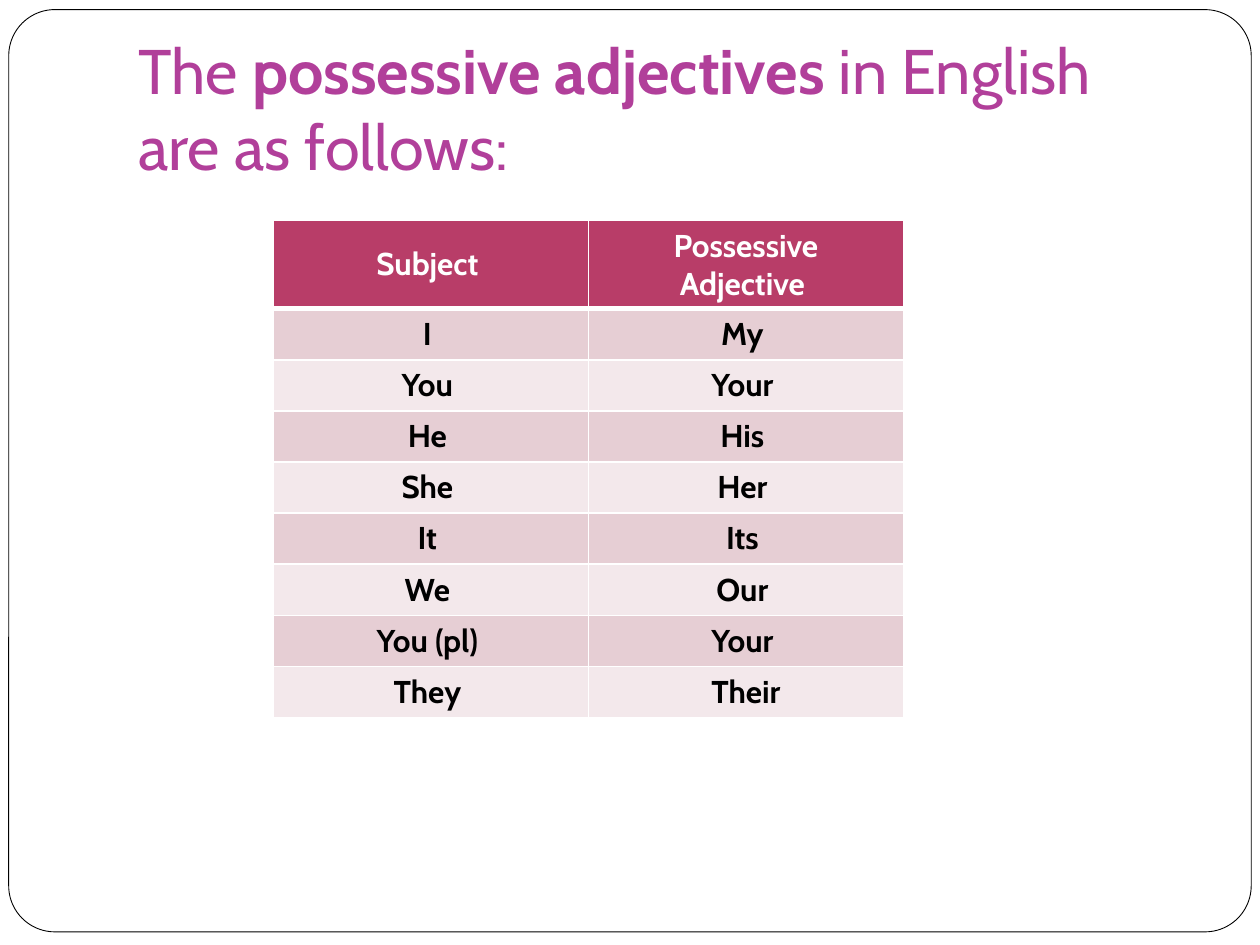
from lxml.etree import SubElement
from pptx import Presentation
from pptx.dml.color import RGBColor
from pptx.enum.shapes import MSO_SHAPE
from pptx.enum.text import MSO_ANCHOR, PP_ALIGN
from pptx.oxml.ns import qn
from pptx.util import Pt

COLORS = {
    "white": "FFFFFF",
    "black": "000000",
    "title": "B13F9A",
    "header": "B83D68",
    "odd_row": "E6CED4",
    "even_row": "F3E8EB",
}

# A trailing space belongs to the wording; \v is a line break.
PRONOUNS = [
    ("Subject ", "Possessive\vAdjective "),
    ("I ", "My "),
    ("You ", "Your "),
    ("He ", "His "),
    ("She ", "Her "),
    ("It ", "Its "),
    ("We ", "Our "),
    ("You (pl) ", "Your "),
    ("They ", "Their"),
]


def color(name):
    return RGBColor.from_string(COLORS[name])


class SlideBuilder:
    font_name = "Cabin"
    title_size = 36
    table_size = 18

    def __init__(self, slide):
        self.slide = slide

    def style_run(self, run, size, color_name, bold):
        run.font.name = self.font_name
        run.font.size = Pt(size)
        run.font.bold = bold
        run.font.color.rgb = color(color_name)

    def frame(self, left, top, width, height):
        border = self.slide.shapes.add_shape(
            MSO_SHAPE.ROUNDED_RECTANGLE, Pt(left), Pt(top), Pt(width), Pt(height))
        border.adjustments[0] = 0.05
        border.shadow.inherit = False
        border.fill.solid()
        border.fill.fore_color.rgb = color("white")
        border.line.color.rgb = color("black")
        border.line.width = Pt(0.5)

    def title(self, left, top, width, height, parts):
        """Add a bottom-anchored title from (text, bold) parts."""
        heading = self.slide.shapes.add_textbox(Pt(left), Pt(top), Pt(width), Pt(height))
        text_frame = heading.text_frame
        text_frame.word_wrap = True
        text_frame.vertical_anchor = MSO_ANCHOR.BOTTOM
        text_frame.margin_bottom = Pt(7.2)
        for text, bold in parts:
            run = text_frame.paragraphs[0].add_run()
            run.text = text
            self.style_run(run, self.title_size, "title", bold)

    def cell_borders(self, cell, bottom, top):
        properties = cell._tc.get_or_add_tcPr()
        for side, width in (("L", 1), ("R", 1), ("T", top), ("B", bottom)):
            line = SubElement(properties, qn(f"a:ln{side}"), w=str(Pt(width)))
            fill = SubElement(line, qn("a:solidFill"))
            SubElement(fill, qn("a:srgbClr"), val=COLORS["white"])

    def table(self, left, top, width, header_height, row_height, rows):
        height = header_height + row_height * (len(rows) - 1)
        grid = self.slide.shapes.add_table(
            len(rows), len(rows[0]), Pt(left), Pt(top), Pt(width), Pt(height)).table
        for index, words in enumerate(rows):
            is_header = index == 0
            grid.rows[index].height = Pt(header_height if is_header else row_height)
            row_fill = "header" if is_header else "odd_row" if index % 2 else "even_row"
            for column, word in enumerate(words):
                cell = grid.cell(index, column)
                self.cell_borders(cell, bottom=3 if is_header else 1,
                                  top=3 if index == 1 else 1)
                cell.fill.solid()
                cell.fill.fore_color.rgb = color(row_fill)
                cell.vertical_anchor = MSO_ANCHOR.MIDDLE
                cell.text_frame.text = word
                paragraph = cell.text_frame.paragraphs[0]
                paragraph.alignment = PP_ALIGN.CENTER
                for run in paragraph.runs:
                    self.style_run(run, self.table_size,
                                   "white" if is_header else "black", True)


def main():
    presentation = Presentation()
    presentation.slide_width = Pt(720)
    presentation.slide_height = Pt(540)
    builder = SlideBuilder(presentation.slides.add_slide(presentation.slide_layouts[6]))
    builder.frame(5, 5.5, 710, 527)
    builder.title(72, 21.6, 612, 90, [
        ("The ", False),
        ("possessive adjectives", True),
        (" in English are as follows:", False),
    ])
    builder.table(156.24, 126, 360, 50.4, 29.2, PRONOUNS)
    presentation.save("out.pptx")


if __name__ == "__main__":
    main()
